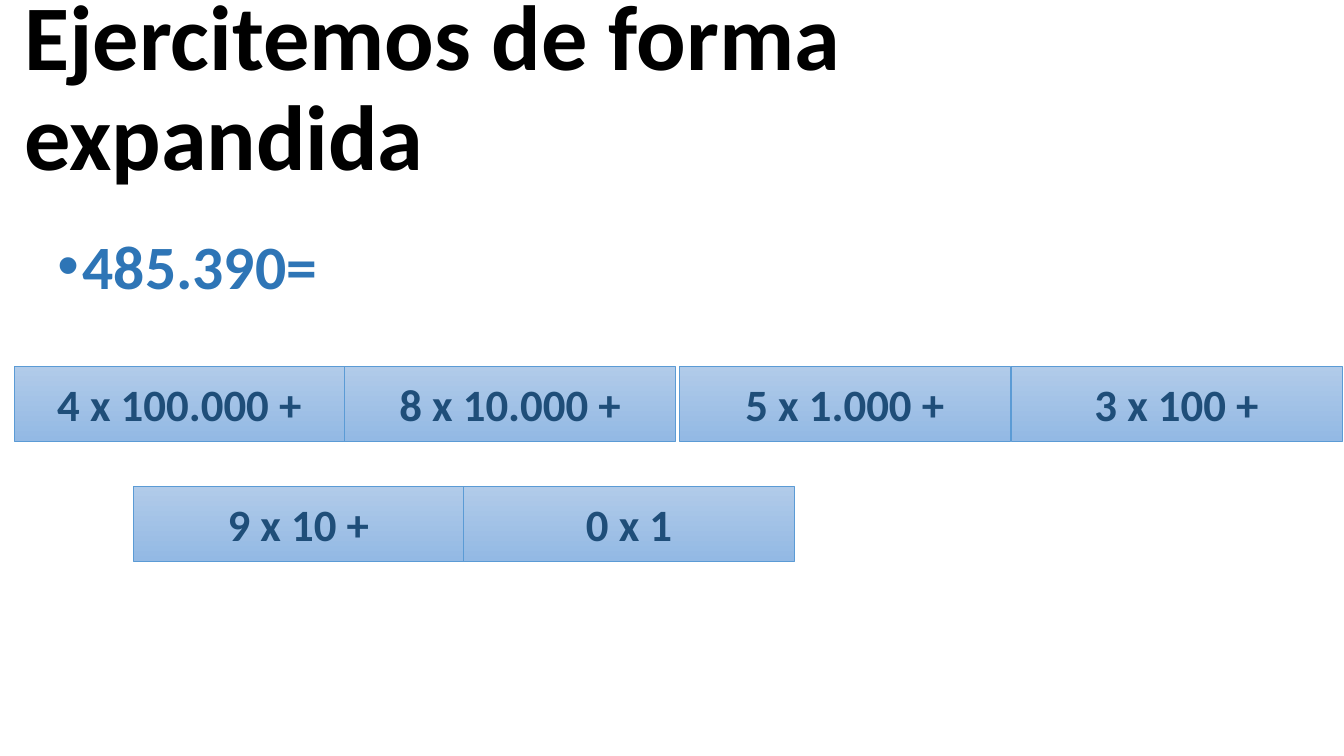
import pptx
import pptx.util
import pptx.dml.color
import pptx.enum.shapes
import pptx.enum.text

Inches = pptx.util.Inches
ALIGN = pptx.enum.text.PP_ALIGN
ANCHOR = pptx.enum.text.MSO_ANCHOR


def tint(color, code):
    color.rgb = pptx.dml.color.RGBColor.from_string(code)


def write(shape, text, size, code, align=ALIGN.LEFT, anchor=ANCHOR.MIDDLE, spacing=1.0):
    """Fill a shape with one bold paragraph and return the paragraph."""
    frame = shape.text_frame
    frame.text = text
    frame.word_wrap = True
    frame.auto_size = pptx.enum.text.MSO_AUTO_SIZE.NONE
    frame.vertical_anchor = anchor
    para = frame.paragraphs[0]
    para.alignment = align
    para.line_spacing = spacing
    para.space_before = pptx.util.Pt(0)
    font = para.runs[0].font
    font.name = "Calibri"
    font.size = pptx.util.Pt(size)
    font.bold = True
    tint(font.color, code)
    return para


deck = pptx.Presentation()
deck.slide_width = Inches(13.33)
deck.slide_height = Inches(7.5)
slide = deck.slides.add_slide(deck.slide_layouts[1])

title, body = slide.placeholders
title.left, title.top = Inches(0.14), Inches(0.21)
title.width, title.height = Inches(11.94), Inches(1.37)
write(title, "Ejercitemos de forma expandida", 66, "000000", spacing=0.9)

body.left, body.top = Inches(0.47), Inches(2.29)
body.width, body.height = Inches(12.86), Inches(5.21)
number = write(body, "485.390=", 44, "2E75B6", anchor=ANCHOR.TOP, spacing=0.9)
props = number._p.get_or_add_pPr()
props.set("marL", str(Inches(0.25)))
props.set("indent", str(Inches(-0.25)))

# Each term of the sum: text, left, top
terms = [
    ("4 x 100.000 +", 0.14, 3.63),
    ("8 x 10.000 +", 3.42, 3.63),
    ("5 x 1.000 +", 6.74, 3.63),
    ("3 x 100 +", 10.03, 3.63),
    ("9 x 10 +", 1.32, 4.82),
    ("0 x 1", 4.6, 4.82),
]
for text, left, top in terms:
    box = slide.shapes.add_shape(
        pptx.enum.shapes.MSO_SHAPE.RECTANGLE,
        Inches(left), Inches(top), Inches(3.28), Inches(0.75))
    box.shadow.inherit = False
    box.fill.gradient()
    box.fill.gradient_angle = 270
    for stop, code in zip(box.fill.gradient_stops, ("B1CBE9", "93B9E4")):
        tint(stop.color, code)
    tint(box.line.color, "5B9BD5")
    box.line.width = pptx.util.Pt(0.5)
    write(box, text, 32, "1F4E79", align=ALIGN.CENTER)

deck.save("out.pptx")
